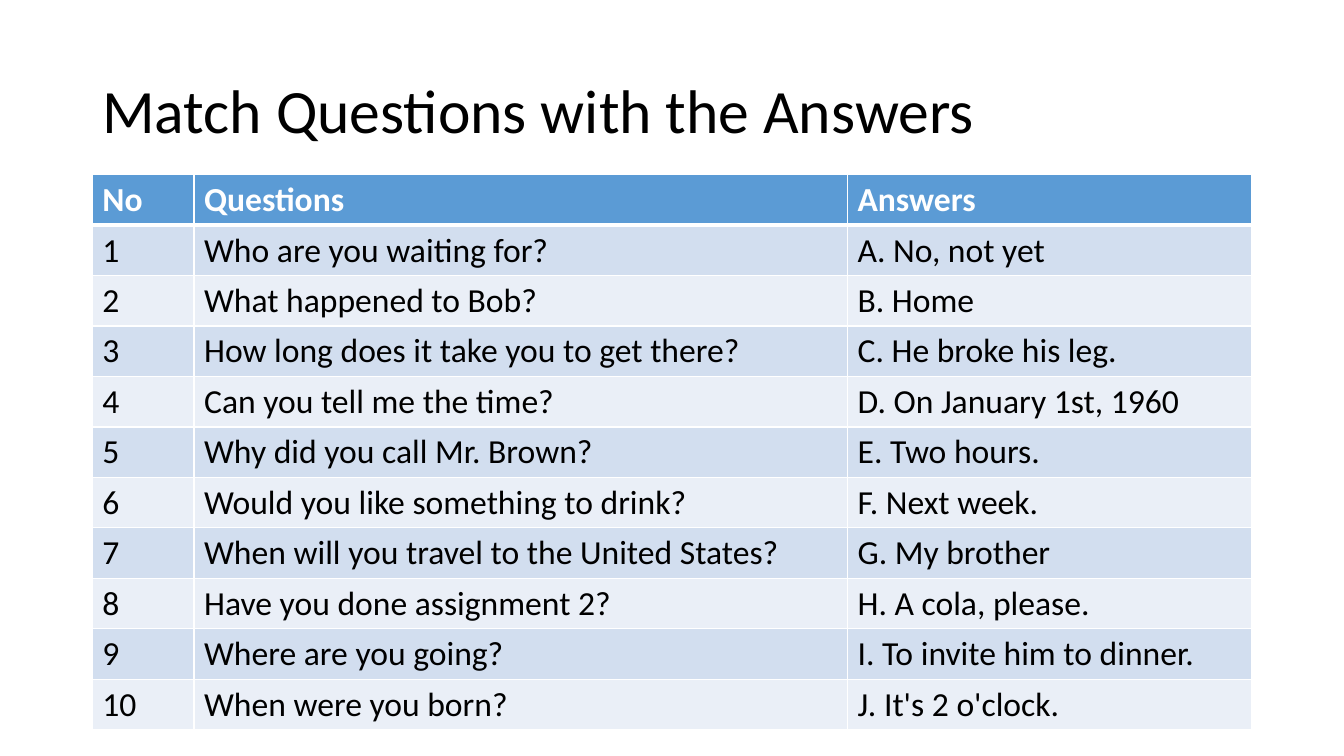
from lxml.etree import SubElement
from pptx import Presentation
from pptx.dml.color import RGBColor
from pptx.enum.text import MSO_ANCHOR
from pptx.oxml.ns import qn
from pptx.util import Inches, Pt

COLORS = {
    "text": "000000",
    "white": "FFFFFF",
    "header": "5B9BD5",
    "odd_row": "D2DEEF",
    "even_row": "EAEFF7",
}

TITLE = "Match Questions with the Answers"
HEADINGS = ("No", "Questions", "Answers")
PAIRS = [
    ("Who are you waiting for?", "A. No, not yet"),
    ("What happened to Bob?", "B. Home"),
    ("How long does it take you to get there?", "C. He broke his leg."),
    ("Can you tell me the time?", "D. On January 1st, 1960"),
    ("Why did you call Mr. Brown?", "E. Two hours."),
    ("Would you like something to drink?", "F. Next week."),
    ("When will you travel to the United States?", "G. My brother"),
    ("Have you done assignment 2?", "H. A cola, please."),
    ("Where are you going?", "I. To invite him to dinner."),
    ("When were you born?", "J. It's 2 o'clock."),
]


def write(frame, text, size=24, color="text", bold=False, font="Calibri", spacing=1.0):
    para = frame.paragraphs[0]
    para.line_spacing = spacing
    span = para.add_run()
    span.text = text
    span.font.name = font
    span.font.size = Pt(size)
    span.font.bold = bold
    span.font.color.rgb = RGBColor.from_string(COLORS[color])


class Page:
    """A slide measured on a grid of 160 columns and 90 rows."""

    def __init__(self, deck):
        self.slide = deck.slides.add_slide(deck.slide_layouts[6])
        self.column = deck.slide_width / 160
        self.row = deck.slide_height / 90

    def place(self, left, top, width, height):
        return (round(left * self.column), round(top * self.row),
                round(width * self.column), round(height * self.row))

    def title(self, text, *area):
        box = self.slide.shapes.add_textbox(*self.place(*area))
        frame = box.text_frame
        frame.word_wrap = True
        frame.vertical_anchor = MSO_ANCHOR.MIDDLE
        write(frame, text, size=44, spacing=0.9)

    def borders(self, cell, **widths):
        properties = cell._tc.get_or_add_tcPr()
        for side in ("L", "R", "T", "B"):
            line = SubElement(properties, qn(f"a:ln{side}"), w=str(Pt(widths.get(side, 1))))
            fill = SubElement(line, qn("a:solidFill"))
            SubElement(fill, qn("a:srgbClr"), val=COLORS["white"])

    def table(self, left, top, columns, row_height, records):
        area = self.place(left, top, sum(columns), row_height * len(records))
        table = self.slide.shapes.add_table(len(records), len(columns), *area).table
        for table_column, width in zip(table.columns, columns):
            table_column.width = round(width * self.column)
        for index, record in enumerate(records):
            header = index == 0
            shade = "header" if header else "odd_row" if index % 2 else "even_row"
            for cell, text in zip(table.rows[index].cells, record):
                # Borders precede the fill in the cell properties
                self.borders(cell, T=3 if index == 1 else 1, B=3 if header else 1)
                cell.fill.solid()
                cell.fill.fore_color.rgb = RGBColor.from_string(COLORS[shade])
                write(cell.text_frame, text, bold=header,
                      color="white" if header else "text")


def main():
    deck = Presentation()
    deck.slide_width, deck.slide_height = Inches(13.333), Inches(7.5)
    page = Page(deck)

    # Heading
    page.title(TITLE, 11, 4.8, 138, 17.4)

    # Questions and answers
    numbered = [(str(number), *pair) for number, pair in enumerate(PAIRS, 1)]
    page.table(11, 20.8, (12.1, 77.8, 48.1), 6, [HEADINGS, *numbered])

    deck.save("out.pptx")


if __name__ == "__main__":
    main()
